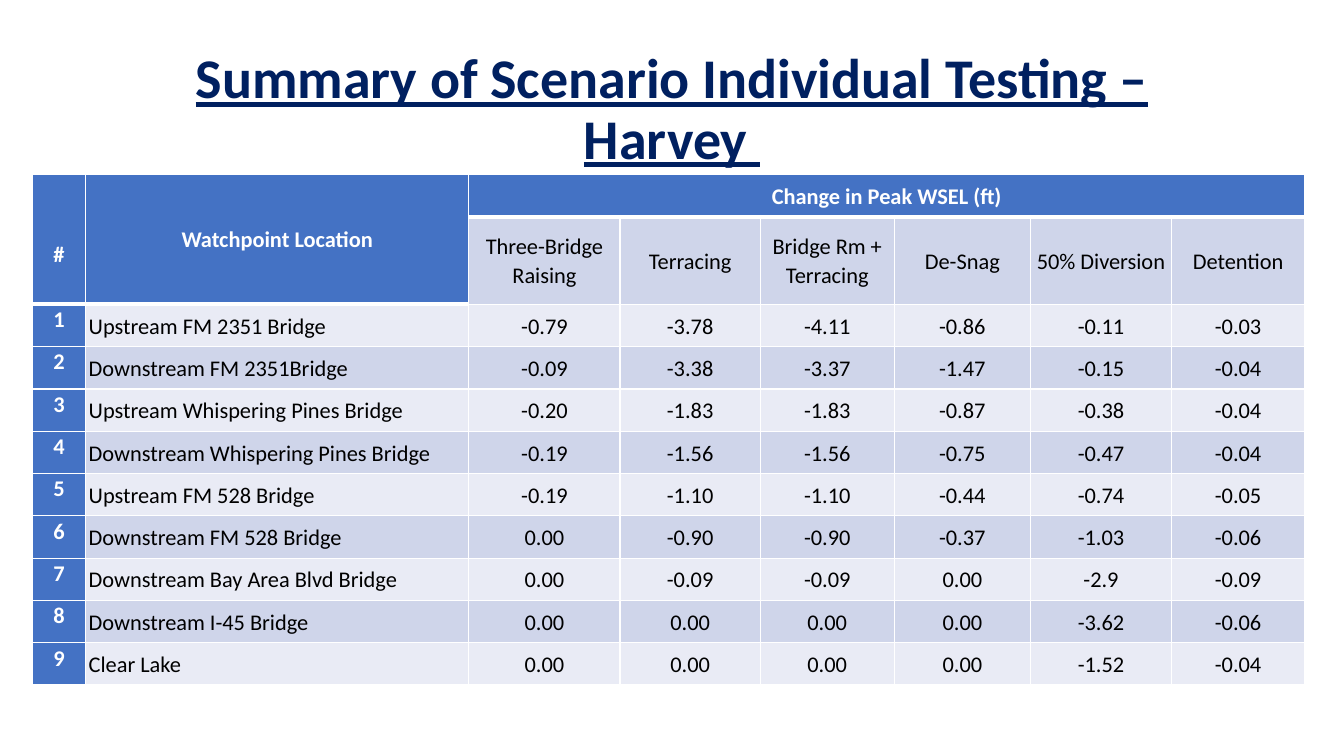
import pptx
import pptx.dml.color
import pptx.enum.text
import pptx.oxml
import pptx.oxml.ns
import pptx.util

Inches = pptx.util.Inches
Pt = pptx.util.Pt
ALIGN = pptx.enum.text.PP_ALIGN
ANCHOR = pptx.enum.text.MSO_ANCHOR


class Theme:
    font = "Calibri"
    navy, blue = "002060", "4472C4"
    white, black = "FFFFFF", "000000"
    bands = ("E9EBF5", "CFD5EA")
    title, body = 40, 16
    thin, thick = 1, 3


WIDTHS = [0.53, 3.8, 1.5, 1.39, 1.33, 1.35, 1.4, 1.32]
HEIGHTS = [0.42, 0.87] + [0.42] * 9
TESTS = ["Three-Bridge Raising", "Terracing", "Bridge Rm + Terracing",
         "De-Snag", "50% Diversion", "Detention"]
POINTS = [
    ("Upstream FM 2351 Bridge", "-0.79 -3.78 -4.11 -0.86 -0.11 -0.03"),
    ("Downstream FM 2351Bridge", "-0.09 -3.38 -3.37 -1.47 -0.15 -0.04"),
    ("Upstream Whispering Pines Bridge", "-0.20 -1.83 -1.83 -0.87 -0.38 -0.04"),
    ("Downstream Whispering Pines Bridge", "-0.19 -1.56 -1.56 -0.75 -0.47 -0.04"),
    ("Upstream FM 528 Bridge", "-0.19 -1.10 -1.10 -0.44 -0.74 -0.05"),
    ("Downstream FM 528 Bridge", "0.00 -0.90 -0.90 -0.37 -1.03 -0.06"),
    ("Downstream Bay Area Blvd Bridge", "0.00 -0.09 -0.09 0.00 -2.9 -0.09"),
    ("Downstream I-45 Bridge", "0.00 0.00 0.00 0.00 -3.62 -0.06"),
    ("Clear Lake", "0.00 0.00 0.00 0.00 -1.52 -0.04"),
]


def apply(target, values):
    for name, value in values.items():
        setattr(target, name, value)


class Deck:
    def __init__(self, theme):
        self.theme = theme
        self.file = pptx.Presentation()
        apply(self.file, {"slide_width": Inches(13.33), "slide_height": Inches(7.5)})
        self.slide = self.file.slides.add_slide(self.file.slide_layouts[6])

    def color(self, code):
        return pptx.dml.color.RGBColor.from_string(code)

    def label(self, frame, text, color, size, bold=False, line=False,
              align=ALIGN.CENTER, space=1.07):
        para = frame.paragraphs[0]
        apply(para, {"alignment": align, "line_spacing": space})
        run = para.add_run()
        run.text = text
        apply(run.font, {"name": self.theme.font, "size": Pt(size),
                         "bold": bold, "underline": line})
        run.font.color.rgb = self.color(color)

    def title(self, text, left, top, width, height):
        box = self.slide.shapes.add_textbox(
            Inches(left), Inches(top), Inches(width), Inches(height))
        box.text_frame.word_wrap = True
        self.label(box.text_frame, text, self.theme.navy, self.theme.title,
                   bold=True, line=True, space=0.9)

    def grid(self, left, top, widths, heights):
        frame = self.slide.shapes.add_table(
            len(heights), len(widths), Inches(left), Inches(top),
            Inches(sum(widths)), Inches(sum(heights)))
        table = frame.table
        apply(table, {"first_row": False, "horz_banding": False})
        for col, width in zip(table.columns, widths):
            col.width = Inches(width)
        for row, height in zip(table.rows, heights):
            row.height = Inches(height)
        return table

    def cell(self, cell, text, fill, side=0.03, top=0, anchor=ANCHOR.MIDDLE,
             align=ALIGN.CENTER):
        theme = self.theme
        head = fill == theme.blue
        apply(cell, {"margin_left": Inches(side), "margin_right": Inches(side),
                     "margin_top": Inches(top), "margin_bottom": 0,
                     "vertical_anchor": anchor})
        cell.fill.solid()
        cell.fill.fore_color.rgb = self.color(fill)
        self.label(cell.text_frame, text, theme.white if head else theme.black,
                   theme.body, bold=head, align=align)

    def border(self, cell, top, bottom):
        props = cell._tc.get_or_add_tcPr()
        thin = self.theme.thin
        edges = [("L", thin), ("R", thin), ("T", top), ("B", bottom)]
        for place, (edge, width) in enumerate(edges):
            line = pptx.oxml.parse_xml(
                f'<a:ln{edge} {pptx.oxml.ns.nsdecls("a")} w="{Pt(width)}">'
                f'<a:solidFill><a:srgbClr val="{self.theme.white}"/></a:solidFill>'
                f'</a:ln{edge}>')
            props.insert(place, line)


def main():
    theme = Theme()
    deck = Deck(theme)
    deck.title("Summary of Scenario Individual Testing – Harvey ",
               1.21, 0.45, 10.91, 0.71)
    table = deck.grid(0.32, 1.73, WIDTHS, HEIGHTS)

    # Merged headings
    for col in (0, 1):
        table.cell(0, col).merge(table.cell(1, col))
    table.cell(0, 2).merge(table.cell(0, 7))
    deck.cell(table.cell(0, 0), "#", theme.blue, side=0, top=0.29)
    deck.cell(table.cell(0, 1), "Watchpoint Location", theme.blue)
    deck.cell(table.cell(0, 2), "Change in Peak WSEL (ft)", theme.blue)
    for col, test in enumerate(TESTS, 2):
        deck.cell(table.cell(1, col), test, theme.bands[1])

    # Watchpoint rows in alternating bands
    for num, (place, values) in enumerate(POINTS, 1):
        row = num + 1
        band = theme.bands[row % 2]
        deck.cell(table.cell(row, 0), str(num), theme.blue, side=0,
                  anchor=ANCHOR.TOP)
        deck.cell(table.cell(row, 1), place, band, align=ALIGN.LEFT)
        for col, value in enumerate(values.split(), 2):
            deck.cell(table.cell(row, col), value, band)

    # White rules, thick below the headings
    for row in range(len(HEIGHTS)):
        for col in range(len(WIDTHS)):
            last = 1 if col < 2 else 0
            top = theme.thick if row == last + 1 else theme.thin
            bottom = theme.thick if row <= last else theme.thin
            deck.border(table.cell(row, col), top, bottom)

    deck.file.save("out.pptx")


if __name__ == "__main__":
    main()
